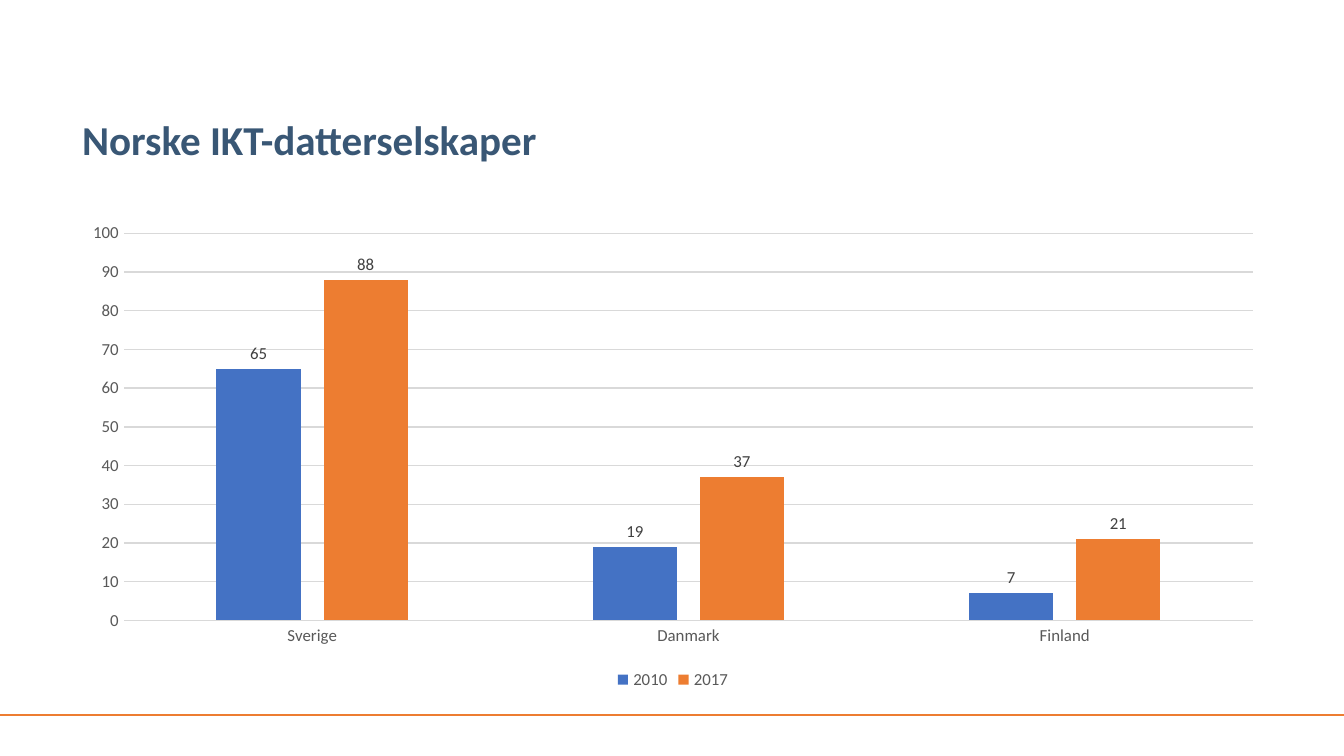
from lxml.etree import SubElement
from pptx import Presentation
from pptx.chart.data import CategoryChartData as ChartData
from pptx.dml.color import RGBColor
from pptx.enum.chart import XL_CHART_TYPE as Kind, XL_LABEL_POSITION as Spot
from pptx.enum.chart import XL_LEGEND_POSITION as Side, XL_TICK_MARK as Tick
from pptx.enum.shapes import MSO_CONNECTOR as Link
from pptx.enum.text import MSO_ANCHOR as Anchor
from pptx.oxml.ns import qn
from pptx.util import Emu, Pt

WIDTH, HEIGHT = 1344, 756
LEFT, SPAN = 69, 1208
FACE = "Calibri"
BLUE, ORANGE, NAVY = "4472C4", "ED7D31", "395775"
GRAY, DARK, PALE, BLACK = "595959", "404040", "D9D9D9", "000000"
LANDS = ["Sverige", "Danmark", "Finland"]
YEARS = [("2010", [65, 19, 7], BLUE), ("2017", [88, 37, 21], ORANGE)]


def px(count):
    """Turn pixels into EMU."""
    return Emu(round(count * 914400 / 134.4))


def tint(code):
    """Turn a hex string into a colour."""
    return RGBColor.from_string(code)


def style(font, size, code, bold=False):
    """Set the face, size, colour and weight of a font."""
    font.name, font.size, font.bold = FACE, Pt(size), bold
    font.color.rgb = tint(code)


def stroke(line, code):
    """Give a line its colour and width."""
    line.color.rgb = tint(code)
    line.width = Pt(0.75)


def add_rule(slide, top):
    """Draw a line across the slide."""
    rule = slide.shapes.add_connector(Link.STRAIGHT, 0, px(top), px(WIDTH), px(top))
    stroke(rule.line, ORANGE)
    SubElement(rule.element.spPr, qn("a:effectLst"))


def add_title(slide, text, top, height):
    """Place the heading."""
    box = slide.shapes.add_textbox(px(LEFT), px(top), px(SPAN), px(height))
    frame = box.text_frame
    frame.word_wrap = True
    frame.vertical_anchor = Anchor.TOP
    run = frame.paragraphs[0].add_run()
    run.text = text
    style(run.font, 22, NAVY, True)


def set_axes(chart):
    """Format both axes and the grid."""
    for axis in (chart.category_axis, chart.value_axis):
        axis.major_tick_mark = axis.minor_tick_mark = Tick.NONE
        style(axis.tick_labels.font, 9, GRAY)
    stroke(chart.category_axis.format.line, PALE)
    scale = chart.value_axis
    scale.format.line.fill.background()
    scale.minimum_scale, scale.maximum_scale, scale.major_unit = 0, 100, 10
    scale.has_major_gridlines = True
    stroke(scale.major_gridlines.format.line, PALE)


def set_bars(plot):
    """Format the bars and their labels."""
    plot.gap_width, plot.overlap = 219, -27
    plot.vary_by_categories = False
    for bars, (_, _, code) in zip(plot.series, YEARS):
        bars.format.fill.solid()
        bars.format.fill.fore_color.rgb = tint(code)
        bars.invert_if_negative = False
        labels = bars.data_labels
        labels.show_value = True
        labels.position = Spot.OUTSIDE_END
        style(labels.font, 9, DARK)


def add_bars(slide, top, height):
    """Place the column chart."""
    data = ChartData()
    data.categories = LANDS
    for name, values, _ in YEARS:
        data.add_series(name, values)
    chart = slide.shapes.add_chart(
        Kind.COLUMN_CLUSTERED, px(LEFT), px(top), px(SPAN), px(height), data
    ).chart
    style(chart.font, 10, BLACK)
    chart.has_title = False
    chart.has_legend = True
    chart.legend.position = Side.BOTTOM
    chart.legend.include_in_layout = False
    style(chart.legend.font, 9, GRAY)
    set_axes(chart)
    set_bars(chart.plots[0])


def main():
    """Build and save the slide."""
    deck = Presentation()
    deck.slide_width, deck.slide_height = px(WIDTH), px(HEIGHT)
    slide = deck.slides.add_slide(deck.slide_layouts[6])
    add_rule(slide, 715)
    add_title(slide, "Norske IKT-datterselskaper", 108, 90)
    add_bars(slide, 214, 481)
    deck.save("out.pptx")


if __name__ == "__main__":
    main()
